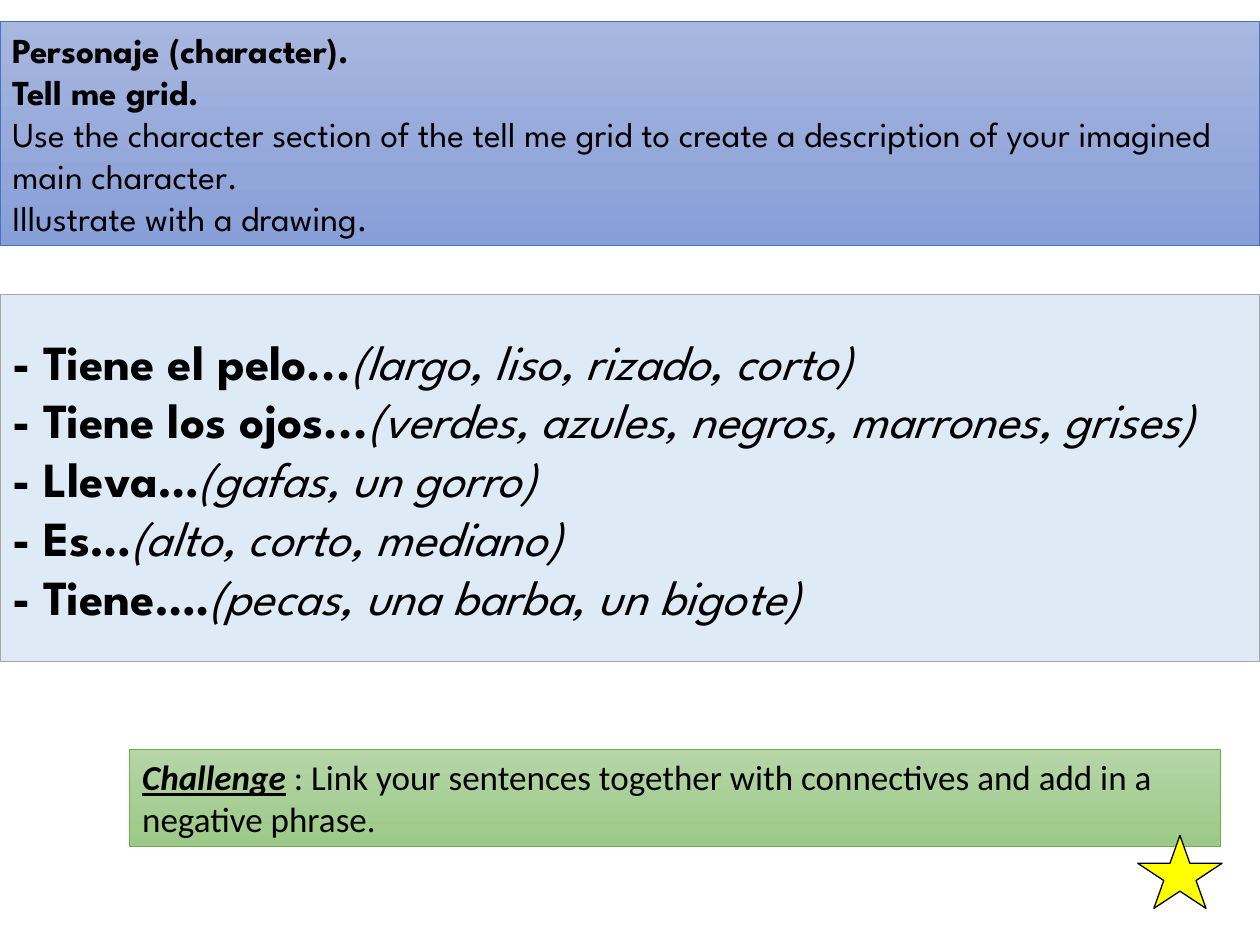
from pptx import Presentation
from pptx.dml.color import RGBColor
from pptx.enum.shapes import MSO_SHAPE
from pptx.enum.text import MSO_ANCHOR, MSO_AUTO_SIZE, PP_ALIGN
from pptx.util import Inches, Pt

RECTANGLE, STAR = MSO_SHAPE.RECTANGLE, MSO_SHAPE.STAR_5_POINT
TOP, MIDDLE = MSO_ANCHOR.TOP, MSO_ANCHOR.MIDDLE
LEFT, GROW = PP_ALIGN.LEFT, MSO_AUTO_SIZE.SHAPE_TO_FIT_TEXT
BLANK_LAYOUT = 6
BLACK = "000000"

deck = Presentation()
deck.slide_width, deck.slide_height = Inches(10), Inches(7.5)
page = deck.slides.add_slide(deck.slide_layouts[BLANK_LAYOUT])


def color(value):
    return RGBColor.from_string(value)


def add_panel(kind, place, fills, line, width):
    """Add a shape; two fill colours make a gradient from top to bottom."""
    panel = page.shapes.add_shape(kind, *[Inches(length) for length in place])
    panel.shadow.inherit = False
    if len(fills) == 2:
        panel.fill.gradient()
        panel.fill.gradient_angle = 270
        for stop, value in zip(panel.fill.gradient_stops, fills):
            stop.color.rgb = color(value)
    else:
        panel.fill.solid()
        panel.fill.fore_color.rgb = color(fills[0])
    panel.line.color.rgb = color(line)
    panel.line.width = Pt(width)
    return panel


# Wording: each paragraph is a list of (text, format) spans
bold, plain, italic = {"bold": True}, {"bold": False}, {"italic": True}
heading = {"bold": True, "italic": True, "underline": True}

task = [
    [("Personaje (character).", bold)],
    [("Tell me grid.", bold)],
    [("Use the character section of the tell me grid to create a description "
      "of your imagined main character.", plain)],
    [("Illustrate with a drawing.", plain)],
]
starters = [
    ("Tiene el pelo...", "largo, liso, rizado, corto"),
    ("Tiene los ojos...", "verdes, azules, negros, marrones, grises"),
    ("Lleva…", "gafas, un gorro"),
    ("Es…", "alto, corto, mediano"),
    ("Tiene….", "pecas, una barba, un bigote"),
]
sentences = [[(f"- {start}", bold), (f"({choices})", italic)]
             for start, choices in starters]
challenge = [[("Challenge", heading),
              (" : Link your sentences together with connectives and add in "
               "a negative phrase.", plain)]]

# Text panels: place, fills, line, anchor, font, size, paragraphs
panels = [
    ((0, 0.17, 10, 1.78), ["A8B7DF", "889ED7"], "4472C4",
     MIDDLE, "League Spartan", 20, task),
    ((0, 2.34, 10, 2.91), ["DEEBF7"], "A5A5A5",
     MIDDLE, "League Spartan", 28, sentences),
    ((1.03, 5.95, 8.66, 0.77), ["B5D5A7", "9CC987"], "70AD47",
     TOP, "Calibri", 20, challenge),
]
for place, fills, line, anchor, font, size, paragraphs in panels:
    frame = add_panel(RECTANGLE, place, fills, line, 0.5).text_frame
    frame.word_wrap = True
    frame.auto_size = GROW
    frame.vertical_anchor = anchor
    for index, spans in enumerate(paragraphs):
        para = frame.add_paragraph() if index else frame.paragraphs[0]
        para.alignment = LEFT
        for text, values in spans:
            span = para.add_run()
            span.text = text
            span.font.color.rgb = color(BLACK)
            for name, value in {"name": font, "size": Pt(size), **values}.items():
                setattr(span.font, name, value)

# Star on the corner of the challenge
add_panel(STAR, (9.03, 6.63, 0.67, 0.58), ["FFFF00"], BLACK, 0.75)

deck.save("out.pptx")
